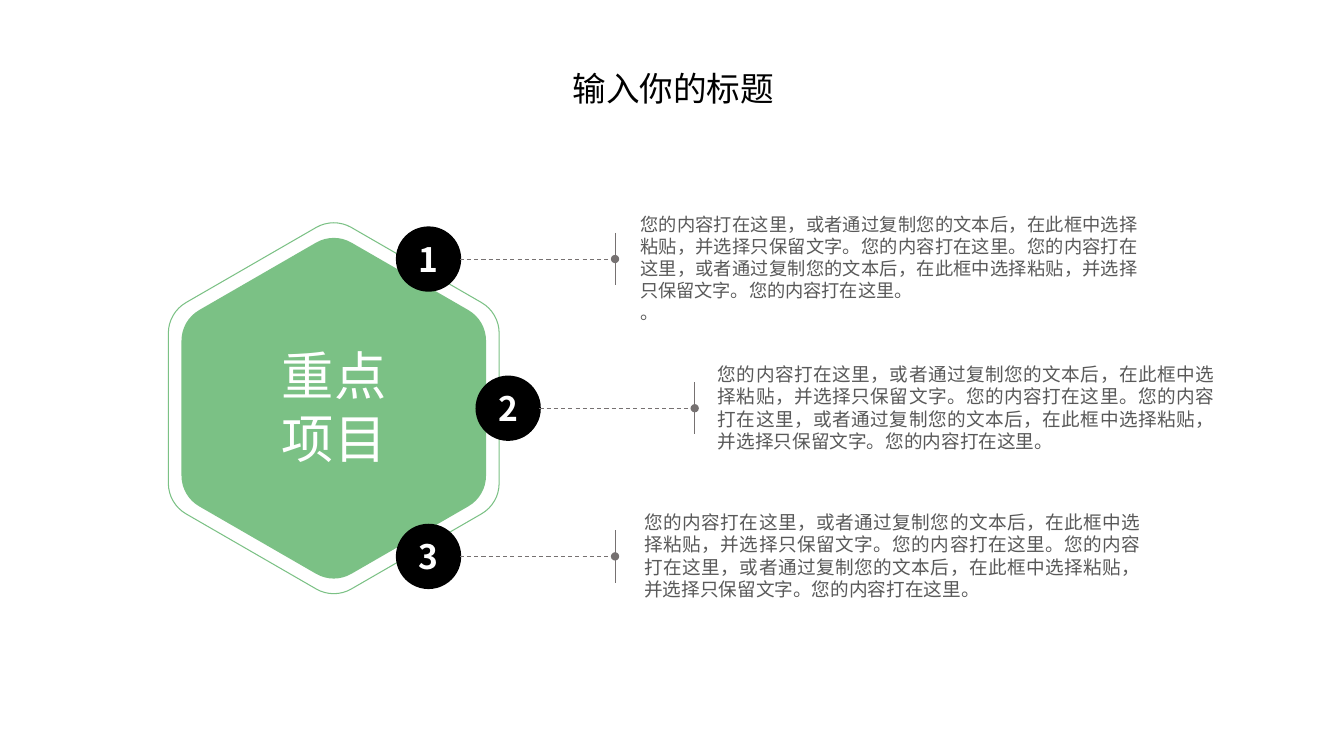
"""Build a slide with a rounded hexagon and three numbered notes."""
from dataclasses import dataclass
from math import cos, radians, sin, tan

from pptx import Presentation
from pptx.dml.color import RGBColor as Rgb
from pptx.enum.dml import MSO_LINE_DASH_STYLE as Dash
from pptx.enum.shapes import MSO_CONNECTOR as Conn, MSO_SHAPE as Kind
from pptx.enum.text import MSO_ANCHOR as Anchor, MSO_AUTO_SIZE as Fit, PP_ALIGN as Align
from pptx.oxml.ns import qn
from pptx.oxml.xmlchemy import OxmlElement as Node
from pptx.shapes.autoshape import Shape
from pptx.shapes.connector import Connector
from pptx.shapes.shapetree import GroupShapes as Group
from pptx.slide import Slide
from pptx.text.text import TextFrame
from pptx.util import Inches, Pt


@dataclass(frozen=True)
class Theme:
    """Colours, font and type sizes of the slide."""
    font: str = "Noto Sans CJK SC"
    green: str = "7BC185"
    black: str = "000000"
    white: str = "FFFFFF"
    body: str = "595959"
    rule: str = "767171"
    title: float = 24
    badge: float = 24
    label: float = 37.3
    thin: float = 0.75


@dataclass(frozen=True)
class Box:
    """A rectangle in inches."""
    left: float
    top: float
    width: float
    height: float


@dataclass(frozen=True)
class Style:
    """The look of a run and its paragraph."""
    size: float
    color: str
    align: Align | None = None
    bold: bool | None = None


@dataclass(frozen=True)
class Note:
    """A numbered badge with its text."""
    mark: str
    x: float
    y: float
    box: Box
    size: float
    lines: tuple[str, ...]


THEME = Theme()
BODY = ("您的内容打在这里，或者通过复制您的文本后，在此框中选择粘贴，并选择只保留文字。"
        "您的内容打在这里。您的内容打在这里，或者通过复制您的文本后，在此框中选择粘贴，"
        "并选择只保留文字。您的内容打在这里。")
MID_X, MID_Y = 3.31, 4.05
DISC, LEAD, TICK = 0.62, 1.54, 0.52
NOTES = (
    Note("1", 4.25, 2.57, Box(6.35, 2.12, 4.93, 1.12), 13, (BODY, "。")),
    Note("2", 5.04, 4.05, Box(7.12, 3.6, 4.93, 0.9), 13.3, (BODY,)),
    Note("3", 4.25, 5.52, Box(6.39, 5.07, 4.93, 0.9), 13.3, (BODY,)),
)


def write(frame: TextFrame, lines: tuple[str, ...], style: Style) -> None:
    """Fill a text frame with one styled run per line."""
    for i, line in enumerate(lines):
        para = frame.add_paragraph() if i else frame.paragraphs[0]
        para.alignment = style.align
        run = para.add_run()
        run.text = line
        font = run.font
        font.name, font.size, font.bold = THEME.font, Pt(style.size), style.bold
        font.color.rgb = Rgb.from_string(style.color)
        east = Node("a:ea")
        east.set("typeface", THEME.font)
        run._r.rPr.find(qn("a:latin")).addnext(east)


def add_text(slide: Slide, box: Box, lines: tuple[str, ...], style: Style,
             inset: bool = False) -> None:
    """Add a wrapping text box."""
    frame = slide.shapes.add_textbox(Inches(box.left), Inches(box.top),
                                     Inches(box.width), Inches(box.height)).text_frame
    frame.word_wrap = True
    frame.auto_size = Fit.SHAPE_TO_FIT_TEXT
    if not inset:
        frame.margin_left = frame.margin_right = Inches(0)
        frame.margin_top = frame.margin_bottom = Inches(0)
    write(frame, lines, style)


def add_hex(slide: Slide, reach: float, curve: float) -> Shape:
    """Add a hexagon with two curves at each corner, turned upright."""
    pull = 4 / 3 * tan(radians(7.5))
    points = []
    for turn in range(0, 360, 60):
        axis = radians(turn)
        x, y = MID_X + reach * cos(axis), MID_Y + reach * sin(axis)
        for step, side in ((-30, 0), (-30, 1), (0, -1), (0, 0), (0, 1), (30, -1), (30, 0)):
            angle, shift = radians(turn + step), side * pull
            points.append((Inches(x + curve * (cos(angle) - shift * sin(angle))),
                           Inches(y + curve * (sin(angle) + shift * cos(angle)))))
    form = slide.shapes.build_freeform(*points[0])
    form.add_line_segments(points[1:], close=True)
    shape = form.convert_to_shape()
    steps = [None, *shape._element.iter(qn("a:lnTo"))]
    for corner in range(0, 42, 7):
        for first in (corner + 1, corner + 4):
            bend = Node("a:cubicBezTo")
            steps[first].addprevious(bend)
            for old in steps[first:first + 3]:
                bend.append(old[0])
                old.getparent().remove(old)
    shape.rotation = 90
    shape.shadow.inherit = False
    return shape


def add_line(group: Group, x1: float, y1: float, x2: float, y2: float) -> Connector:
    """Add a thin grey line."""
    line = group.add_connector(Conn.STRAIGHT, Inches(x1), Inches(y1),
                               Inches(x2), Inches(y2))
    line.line.width = Pt(THEME.thin)
    line.line.color.rgb = Rgb.from_string(THEME.rule)
    line._element.spPr.append(Node("a:effectLst"))
    return line


def add_note(slide: Slide, note: Note) -> None:
    """Add a badge, its leader and its text."""
    half = DISC / 2
    disc = slide.shapes.add_shape(Kind.OVAL, Inches(note.x - half), Inches(note.y - half),
                                  Inches(DISC), Inches(DISC))
    disc.shadow.inherit = False
    disc.fill.solid()
    disc.fill.fore_color.rgb = Rgb.from_string(THEME.black)
    disc.line.color.rgb = Rgb.from_string(THEME.black)
    disc.line.width = Pt(2)
    disc.text_frame.vertical_anchor = Anchor.MIDDLE
    write(disc.text_frame, (note.mark,),
          Style(THEME.badge, THEME.white, Align.CENTER, True))
    start = note.x + half
    end = start + LEAD
    group = slide.shapes.add_group_shape().shapes
    lead = add_line(group, start, note.y, end, note.y)
    lead.line.dash_style = Dash.DASH
    tail = Node("a:tailEnd")
    tail.set("type", "oval")
    lead.line._ln.append(tail)
    add_line(group, end, note.y - TICK / 2, end, note.y + TICK / 2)
    add_text(slide, note.box, note.lines, Style(note.size, THEME.body, Align.JUSTIFY))


def main() -> None:
    """Build and save the slide."""
    deck = Presentation()
    deck.slide_width, deck.slide_height = Inches(13.33), Inches(7.5)
    slide = deck.slides.add_slide(deck.slide_layouts[6])
    core = add_hex(slide, 1.34, 0.35)
    core.fill.solid()
    core.fill.fore_color.rgb = Rgb.from_string(THEME.green)
    core.line.fill.background()
    add_text(slide, Box(2.55, 3.41, 1.53, 1.26), ("重点项目",),
             Style(THEME.label, THEME.white, Align.CENTER))
    ring = add_hex(slide, 1.49, 0.35)
    ring.fill.background()
    ring.line.color.rgb = Rgb.from_string(THEME.green)
    ring.line.width = Pt(THEME.thin)
    for note in NOTES:
        add_note(slide, note)
    add_text(slide, Box(5.58, 0.62, 2.64, 0.5), ("输入你的标题",),
             Style(THEME.title, THEME.black), inset=True)
    deck.save("out.pptx")


if __name__ == "__main__":
    main()
